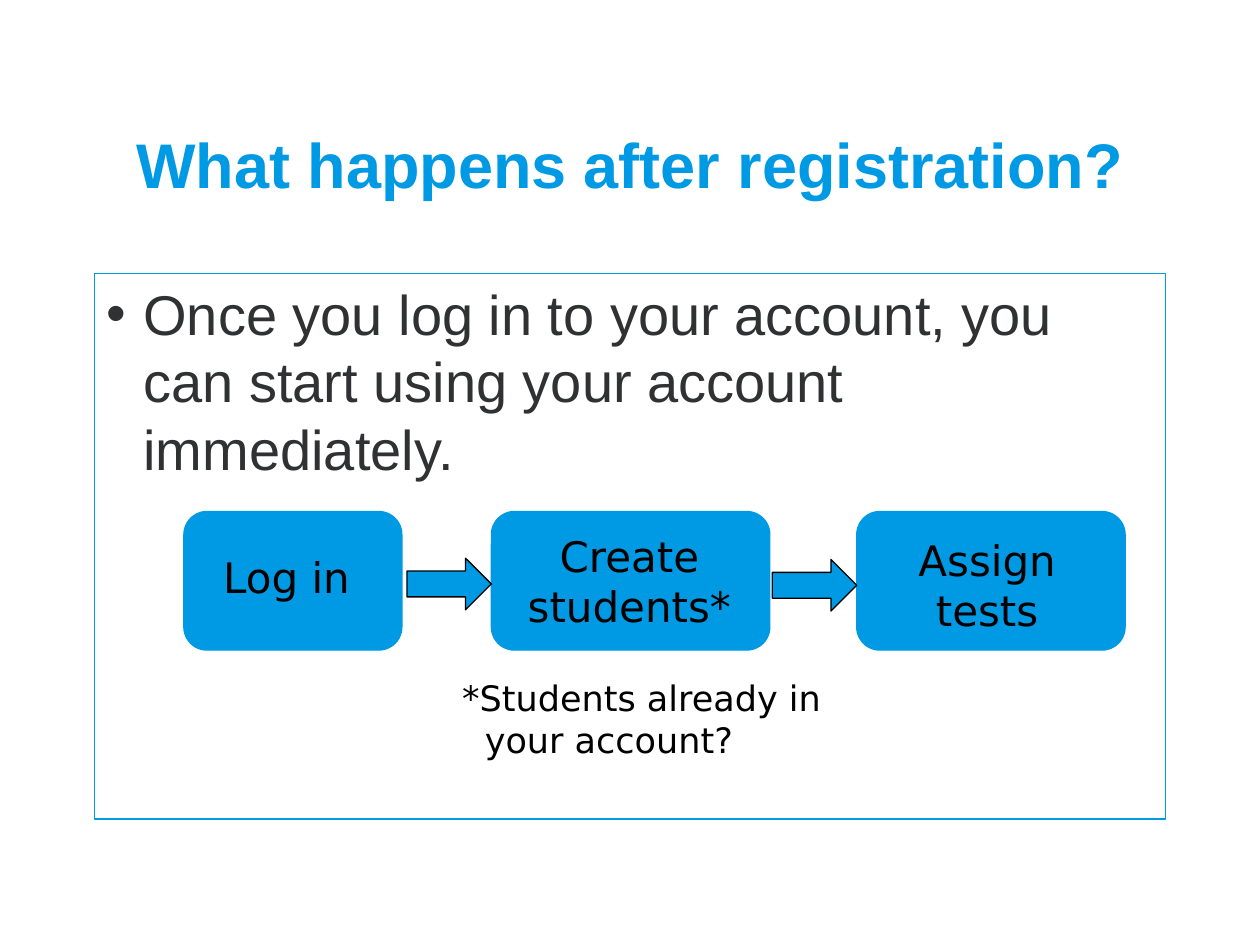
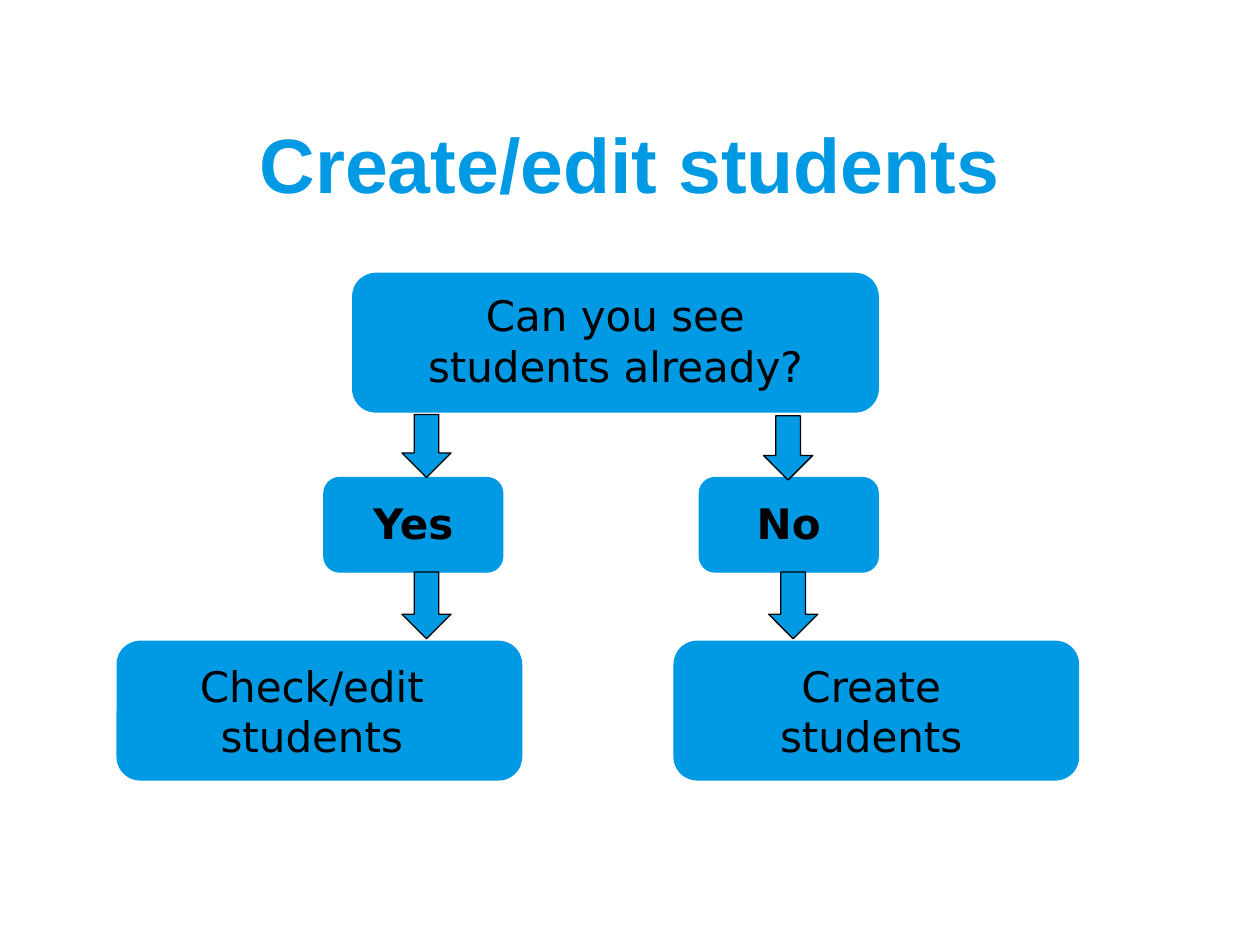
from lxml.etree import SubElement
from pptx import Presentation
from pptx.dml.color import RGBColor
from pptx.enum.shapes import MSO_SHAPE
from pptx.enum.text import MSO_ANCHOR, MSO_AUTO_SIZE, PP_ALIGN
from pptx.oxml.ns import qn
from pptx.util import Inches, Pt

COLORS = {"blue": "0099E3", "body": "303132", "black": "000000"}
HEADING_FONT = "Arial"
DIAGRAM_FONT = "DejaVu Sans"
COLUMNS, ROWS = 100, 75
SLIDE_WIDTH, SLIDE_HEIGHT = Inches(10), Inches(7.5)
TITLE_ONLY = 5


def color(name):
    return RGBColor.from_string(COLORS[name])


def place(left, top, width, height):
    column, row = SLIDE_WIDTH / COLUMNS, SLIDE_HEIGHT / ROWS
    return [round(n) for n in (left * column, top * row, width * column, height * row)]


def style(paragraph, size, name, font=DIAGRAM_FONT, bold=False, align=PP_ALIGN.LEFT):
    paragraph.alignment = align
    paragraph.font.size = Pt(size)
    paragraph.font.name = font
    paragraph.font.bold = bold
    paragraph.font.color.rgb = color(name)


def indent(paragraph, left, first=0):
    properties = paragraph._p.get_or_add_pPr()
    properties.set("marL", str(Inches(left)))
    properties.set("indent", str(Inches(first)))
    return properties


def add_titled_slide(presentation, text, size):
    slide = presentation.slides.add_slide(presentation.slide_layouts[TITLE_ONLY])
    title = slide.shapes.title
    title.left, title.top, title.width, title.height = place(7.5, 6.7, 85, 12.5)
    frame = title.text_frame
    frame.text = text
    frame.auto_size = MSO_AUTO_SIZE.NONE
    frame.vertical_anchor = MSO_ANCHOR.MIDDLE
    style(frame.paragraphs[0], size, "blue", HEADING_FONT, True, PP_ALIGN.CENTER)
    return slide


def add_filled(slide, kind, area, outline):
    shape = slide.shapes.add_shape(kind, *place(*area))
    shape.shadow.inherit = False
    shape.fill.solid()
    shape.fill.fore_color.rgb = color("blue")
    shape.line.color.rgb = color(outline)
    shape.line.width = Pt(0.75)
    return shape


def add_step(slide, text, area, side=0.2, nudge=(0, 0), bold=False):
    shape = add_filled(slide, MSO_SHAPE.ROUNDED_RECTANGLE, area, "blue")
    frame = shape.text_frame
    frame.text = text
    frame.word_wrap = True
    frame.vertical_anchor = MSO_ANCHOR.MIDDLE
    across, down = nudge
    frame.margin_left, frame.margin_right = Inches(side + across), Inches(side - across)
    frame.margin_top, frame.margin_bottom = Inches(0.05 + down), Inches(0.05 - down)
    style(frame.paragraphs[0], 24, "black", bold=bold, align=PP_ALIGN.CENTER)


def add_arrow(slide, kind, area):
    add_filled(slide, kind, area, "black")


def add_bullet_panel(slide, text, area):
    panel = slide.shapes.add_textbox(*place(*area))
    panel.line.color.rgb = color("blue")
    panel.line.width = Pt(0.75)
    frame = panel.text_frame
    frame.word_wrap = True
    frame.text = text
    paragraph = frame.paragraphs[0]
    properties = indent(paragraph, 0.29, -0.29)
    SubElement(properties, qn("a:buFont")).set("typeface", HEADING_FONT)
    SubElement(properties, qn("a:buChar")).set("char", "•")
    style(paragraph, 32, "body", HEADING_FONT)


def add_note(slide, lines, area):
    frame = slide.shapes.add_textbox(*place(*area)).text_frame
    frame.word_wrap = True
    frame.text = "\n".join(lines)
    for number, paragraph in enumerate(frame.paragraphs):
        indent(paragraph, 0.18 * number)
        style(paragraph, 20, "black")


def build_registration(presentation):
    slide = add_titled_slide(presentation, "What happens after registration?", 36)
    add_bullet_panel(
        slide,
        "Once you log in to your account, you can start using your account immediately.",
        (7.5, 21.7, 85, 43.3),
    )
    steps = [
        ("Log in", 14.6, 17.3, (-0.05, -0.03)),
        ("Create students*", 39, 22.1, (-0.01, 0)),
        ("Assign tests", 68, 21.3, (-0.03, 0.03)),
    ]
    for text, left, width, nudge in steps:
        add_step(slide, text, (left, 40.6, width, 11), nudge=nudge)
    for left, top in ((32.3, 44.3), (61.3, 44.4)):
        add_arrow(slide, MSO_SHAPE.RIGHT_ARROW, (left, top, 6.7, 4.1))
    add_note(slide, ["*Students already in", "your account?"], (35.7, 53.2, 32.3, 7.7))


def build_students(presentation):
    slide = add_titled_slide(presentation, "Create/edit students", 44)
    add_step(slide, "Can you see students already?", (28, 21.7, 41.7, 11), 0.35, (0, -0.02))
    branches = [
        ("Yes", 25.7, "Check/edit students", 9.3, -0.06),
        ("No", 55.5, "Create students", 53.5, -0.04),
    ]
    for answer, answer_left, action, action_left, shift in branches:
        add_step(slide, answer, (answer_left, 37.9, 14.2, 7.5), nudge=(0, -0.02), bold=True)
        add_step(slide, action, (action_left, 50.9, 32.1, 11), 0.4, (shift, 0))
    arrows = [
        (31.9, 32.9, 5),
        (60.6, 33, 5.1),
        (31.9, 45.4, 5.3),
        (61, 45.4, 5.3),
    ]
    for left, top, height in arrows:
        add_arrow(slide, MSO_SHAPE.DOWN_ARROW, (left, top, 3.9, height))


def main():
    presentation = Presentation()
    presentation.slide_width = SLIDE_WIDTH
    presentation.slide_height = SLIDE_HEIGHT
    build_registration(presentation)
    build_students(presentation)
    presentation.save("out.pptx")


if __name__ == "__main__":
    main()
